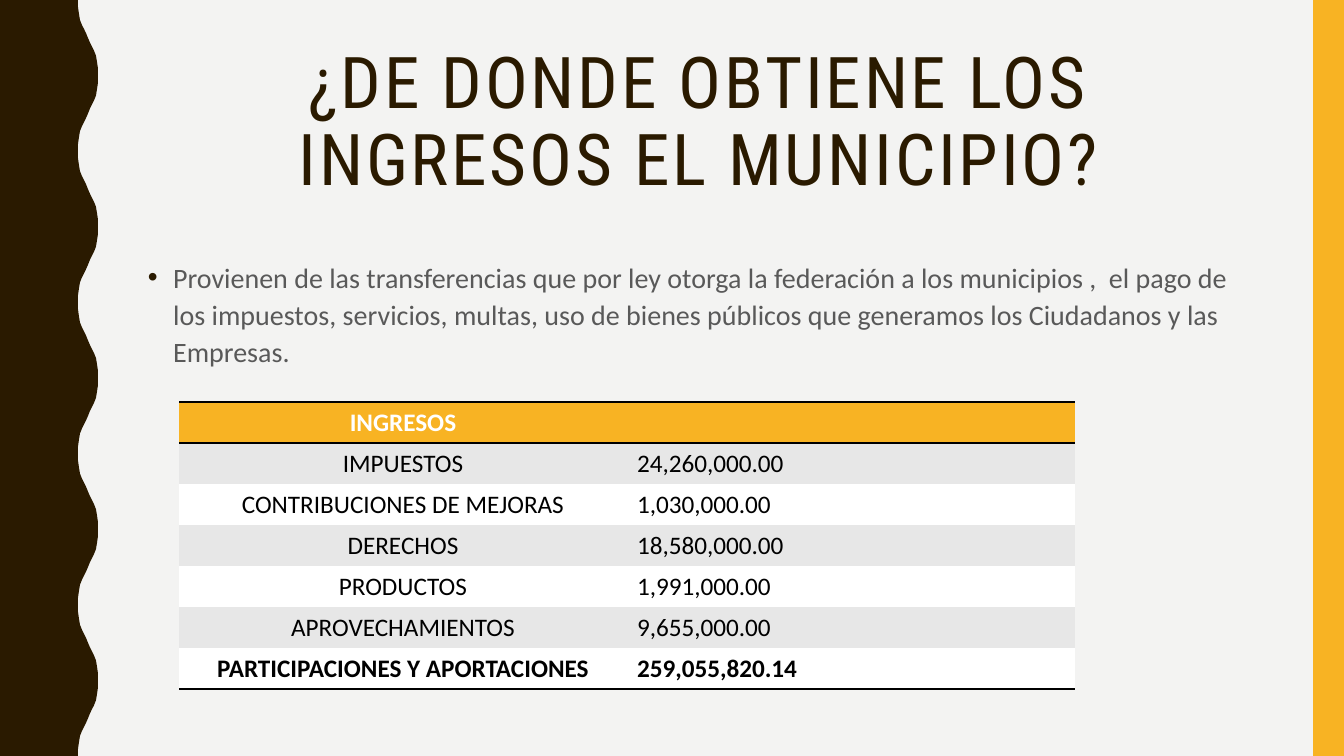
"""Build the slide on where the municipality gets its income."""
import lxml.etree
import pptx
import pptx.dml.color
import pptx.enum.shapes
import pptx.enum.text
import pptx.oxml.ns
import pptx.util

RGBColor = pptx.dml.color.RGBColor
PP_ALIGN = pptx.enum.text.PP_ALIGN
MSO_ANCHOR = pptx.enum.text.MSO_ANCHOR
qn = pptx.oxml.ns.qn

TITLE = "¿DE DONDE OBTIENE LOS INGRESOS EL MUNICIPIO?"
BODY = (
    "Provienen de las transferencias que por ley otorga la federación a los municipios ,  "
    "el pago de los impuestos, servicios, multas, uso de bienes públicos que generamos "
    "los Ciudadanos y las Empresas."
)
INCOME = [
    ("INGRESOS", ""),
    ("IMPUESTOS", "24,260,000.00"),
    ("CONTRIBUCIONES DE MEJORAS", "1,030,000.00"),
    ("DERECHOS", "18,580,000.00"),
    ("PRODUCTOS", "1,991,000.00"),
    ("APROVECHAMIENTOS", "9,655,000.00"),
    ("PARTICIPACIONES Y APORTACIONES", "259,055,820.14"),
]

BACKGROUND = RGBColor(0xF3, 0xF3, 0xF2)
BROWN = RGBColor(0x2A, 0x1A, 0x00)
AMBER = RGBColor(0xF8, 0xB3, 0x23)
GREY_TEXT = RGBColor(0x59, 0x59, 0x59)
BAND = RGBColor(0xE7, 0xE7, 0xE7)
WHITE = RGBColor(0xFF, 0xFF, 0xFF)
BLACK = RGBColor(0x00, 0x00, 0x00)

EMU_PER_PX = 914400 / 100.8
WIDTH, HEIGHT = 1344, 756
WAVE_LEFT, WAVE_DEPTH, WAVE_HALVES = 78, 20, 10
WAVE_QUARTER = [(0, 0), (0, 7), (1, 14), (2, 20), (4, 25), (6, 29), (8, 33), (10, 38)]
STRIPE_LEFT = 1313
TITLE_BOX = (138, 42, 1122, 164)
BODY_BOX = (138, 252, 1122, 396)
TABLE_LEFT, TABLE_TOP, COLUMN_WIDTH, ROW_HEIGHT = 179, 402, 448, 41
NO_STYLE = "{2D5ABB26-0587-4C30-8999-92F81FD0307C}"


def px(length):
    return pptx.util.Emu(round(length * EMU_PER_PX))


def place(shape, box):
    shape.left, shape.top, shape.width, shape.height = map(px, box)


def paint(shape, color):
    shape.shadow.inherit = False
    shape.fill.solid()
    shape.fill.fore_color.rgb = color
    shape.line.fill.background()


def set_font(paragraph, name, size, color, bold=False):
    font = paragraph.font
    font.name, font.size, font.bold = name, pptx.util.Pt(size), bold
    font.color.rgb = color


def add_wave(slide):
    half = HEIGHT / WAVE_HALVES
    swing = WAVE_QUARTER + [(WAVE_DEPTH - x, half - y) for x, y in WAVE_QUARTER[-2::-1]]
    points = [(WAVE_LEFT + (WAVE_DEPTH - x if index % 2 else x), index * half + y)
              for index in range(WAVE_HALVES) for x, y in swing]
    builder = slide.shapes.build_freeform(0, 0)
    builder.add_line_segments([(px(x), px(y)) for x, y in points + [(0, HEIGHT)]])
    paint(builder.convert_to_shape(), BROWN)


def add_stripe(slide):
    box = map(px, (STRIPE_LEFT, 0, WIDTH - STRIPE_LEFT, HEIGHT))
    stripe = slide.shapes.add_shape(pptx.enum.shapes.MSO_SHAPE.RECTANGLE, *box)
    paint(stripe, AMBER)


def fill_title(slide):
    title = slide.shapes.title
    place(title, TITLE_BOX)
    frame = title.text_frame
    frame.text = TITLE
    frame.word_wrap = True
    frame.auto_size = pptx.enum.text.MSO_AUTO_SIZE.NONE
    frame.vertical_anchor = MSO_ANCHOR.MIDDLE
    paragraph = frame.paragraphs[0]
    paragraph.alignment = PP_ALIGN.CENTER
    paragraph.line_spacing = 0.9
    set_font(paragraph, "Roboto Condensed", 51, BROWN)
    paragraph.runs[0].font._element.set("spc", "200")


def add_body(slide):
    frame = slide.shapes.add_textbox(*map(px, BODY_BOX)).text_frame
    frame.word_wrap = True
    frame.text = BODY
    paragraph = frame.paragraphs[0]
    paragraph.line_spacing = 1.1
    paragraph.space_before = pptx.util.Pt(7)
    set_font(paragraph, "Calibri", 20, GREY_TEXT)
    properties = paragraph._p.get_or_add_pPr()
    indent = pptx.util.Inches(0.25)
    properties.set("marL", str(indent))
    properties.set("indent", str(-indent))
    bullet_color = lxml.etree.Element(qn("a:buClr"))
    lxml.etree.SubElement(bullet_color, qn("a:srgbClr"), val=str(BROWN))
    bullet_font = lxml.etree.Element(qn("a:buFont"), typeface="Arial")
    bullet = lxml.etree.Element(qn("a:buChar"), char="•")
    position = properties.index(properties.find(qn("a:defRPr")))
    properties[position:position] = [bullet_color, bullet_font, bullet]


def add_border(cell, side):
    line = lxml.etree.Element(qn("a:" + side), w=str(pptx.util.Pt(2)))
    fill = lxml.etree.SubElement(line, qn("a:solidFill"))
    lxml.etree.SubElement(fill, qn("a:srgbClr"), val=str(BLACK))
    cell._tc.get_or_add_tcPr().insert(0, line)


def add_income_table(slide):
    columns, last = len(INCOME[0]), len(INCOME) - 1
    box = (TABLE_LEFT, TABLE_TOP, columns * COLUMN_WIDTH, len(INCOME) * ROW_HEIGHT)
    table = slide.shapes.add_table(len(INCOME), columns, *map(px, box)).table
    table._tbl.tblPr.find(qn("a:tableStyleId")).text = NO_STYLE
    table.horz_banding = False
    for row, entries in enumerate(INCOME):
        for column, text in enumerate(entries):
            cell = table.cell(row, column)
            cell.text = text
            cell.fill.solid()
            cell.fill.fore_color.rgb = AMBER if row == 0 else BAND if row % 2 else WHITE
            paragraph = cell.text_frame.paragraphs[0]
            paragraph.alignment = PP_ALIGN.LEFT if column else PP_ALIGN.CENTER
            set_font(paragraph, "Calibri", 18, BLACK if row else WHITE, row in (0, last))
            if row in (0, last):
                add_border(cell, "lnB")
            if row == 0:
                add_border(cell, "lnT")


def main():
    presentation = pptx.Presentation()
    presentation.slide_width, presentation.slide_height = px(WIDTH), px(HEIGHT)
    slide = presentation.slides.add_slide(presentation.slide_layouts.get_by_name("Title Only"))
    slide.background.fill.solid()
    slide.background.fill.fore_color.rgb = BACKGROUND
    add_wave(slide)
    add_stripe(slide)
    fill_title(slide)
    add_body(slide)
    add_income_table(slide)
    presentation.save("out.pptx")


if __name__ == "__main__":
    main()
